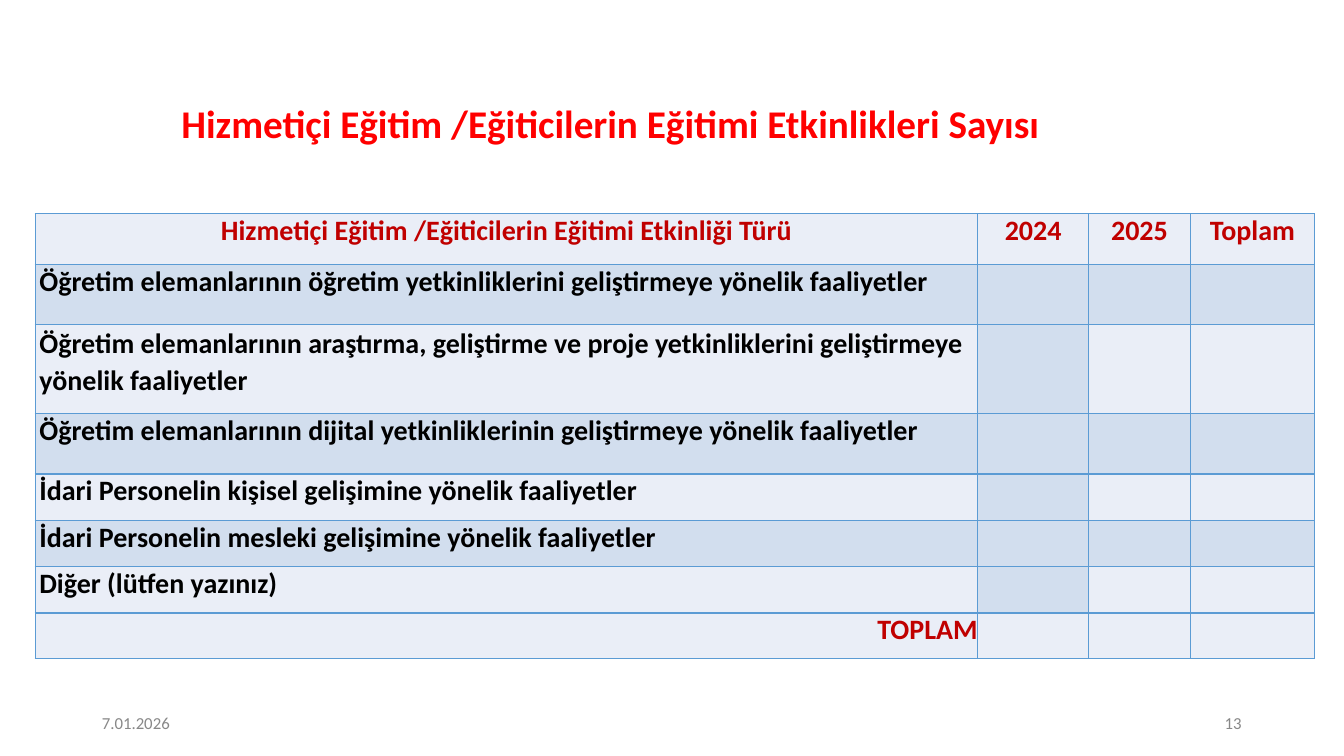
from dataclasses import dataclass

from lxml import etree
from pptx import Presentation
from pptx import util as u
from pptx.dml.color import RGBColor
from pptx.enum import text
from pptx.oxml.ns import qn

FONT = "Calibri"
RED, DARK_RED, BLACK, GREY = "FF0000", "C00000", "000000", "888888"
PALE, BLUE, BORDER = "EAEEF7", "D2DEEE", "5B9BD4"
LEFT, CENTER, RIGHT = text.PP_ALIGN.LEFT, text.PP_ALIGN.CENTER, text.PP_ALIGN.RIGHT


@dataclass
class Label:
    words: str
    left: float
    top: float
    width: float
    height: float
    size: float
    color: str
    bold: bool = False
    inset_left: float = 0
    inset_top: float = 0


@dataclass
class Row:
    height: float
    words: list[str]
    align: text.PP_ALIGN = LEFT
    color: str = BLACK
    indent: float = 2.9
    spacing: float = 1


LABELS = [
    Label("Hizmetiçi Eğitim /Eğiticilerin Eğitimi Etkinlikleri Sayısı",
          110.9, 59.8, 738.7, 54, 28, RED, True, 18.7, 10.8),
    Label("7.01.2026", 72, 509, 51.1, 14.4, 12, GREY, inset_left=0.7),
    Label("13", 872.6, 509, 16.6, 14.4, 12, GREY, inset_left=2.2),
]
COLUMN_WIDTHS = [673.2, 79.2, 72.7, 88.6]
ROWS = [
    Row(36, ["Hizmetiçi Eğitim /Eğiticilerin Eğitimi Etkinliği Türü", "2024", "2025", "Toplam"],
        CENTER, DARK_RED, 0),
    Row(43.2, ["Öğretim elemanlarının öğretim yetkinliklerini geliştirmeye yönelik faaliyetler"]),
    Row(63.4, ["Öğretim elemanlarının araştırma, geliştirme ve proje yetkinliklerini "
               "geliştirmeye yönelik faaliyetler"], spacing=1.07),
    Row(43.2, ["Öğretim elemanlarının dijital yetkinliklerinin geliştirmeye yönelik faaliyetler"]),
    Row(33.1, ["İdari Personelin kişisel gelişimine yönelik faaliyetler"]),
    Row(33.1, ["İdari Personelin mesleki gelişimine yönelik faaliyetler"]),
    Row(33.1, ["Diğer (lütfen yazınız)"]),
    Row(32.4, ["TOPLAM"], RIGHT, DARK_RED, 0),
]


def rgb(color: str) -> RGBColor:
    return RGBColor.from_string(color)


def write(frame, words: str, *, size: float, color: str, bold: bool = False,
          align: text.PP_ALIGN = LEFT, spacing: float = 1) -> None:
    para = frame.paragraphs[0]
    para.alignment = align
    para.line_spacing = spacing
    span = para.add_run()
    span.text = words
    span.font.name = FONT
    span.font.size = u.Pt(size)
    span.font.bold = bold
    span.font.color.rgb = rgb(color)


def add_label(page, label: Label) -> None:
    box = page.shapes.add_textbox(*map(u.Pt, (label.left, label.top, label.width, label.height)))
    frame = box.text_frame
    frame.word_wrap = True
    frame.margin_left, frame.margin_top = u.Pt(label.inset_left), u.Pt(label.inset_top)
    frame.margin_right = frame.margin_bottom = 0
    write(frame, label.words, size=label.size, color=label.color, bold=label.bold)


def set_borders(cell, top: float, bottom: float) -> None:
    """Draw the four cell borders; they must precede the fill in the XML."""
    properties = cell._tc.get_or_add_tcPr()
    sides = {"a:lnL": 1, "a:lnR": 1, "a:lnT": top, "a:lnB": bottom}
    for position, (tag, width) in enumerate(sides.items()):
        line = etree.Element(qn(tag), w=str(u.Pt(width)))
        fill = etree.SubElement(line, qn("a:solidFill"))
        etree.SubElement(fill, qn("a:srgbClr"), val=BORDER)
        properties.insert(position, line)


def cell_fill(row: int, column: int) -> str:
    last = len(ROWS) - 1
    shaded = 0 < row < last and (row % 2 == 1 or column == 1)
    return BLUE if shaded else PALE


def add_activity_table(page) -> None:
    table = page.shapes.add_table(
        len(ROWS), len(COLUMN_WIDTHS), u.Pt(25.2), u.Pt(152.8),
        u.Pt(sum(COLUMN_WIDTHS)), u.Pt(sum(row.height for row in ROWS))).table
    for column, width in zip(table.columns, COLUMN_WIDTHS):
        column.width = u.Pt(width)
    last = len(ROWS) - 1
    for r, row in enumerate(ROWS):
        table.rows[r].height = u.Pt(row.height)
        for c in range(len(COLUMN_WIDTHS)):
            cell = table.cell(r, c)
            cell.margin_left = u.Pt(row.indent)
            cell.margin_top = cell.margin_right = cell.margin_bottom = 0
            cell.fill.solid()
            cell.fill.fore_color.rgb = rgb(cell_fill(r, c))
            set_borders(cell, 2 if r == last else 1, 2 if r == last - 1 else 1)
            if c < len(row.words):
                write(cell.text_frame, row.words[c], size=20, color=row.color, bold=True,
                      align=row.align, spacing=row.spacing)


def main() -> None:
    deck = Presentation()
    deck.slide_width, deck.slide_height = u.Pt(960), u.Pt(540)
    page = deck.slides.add_slide(deck.slide_layouts[6])
    for label in LABELS:
        add_label(page, label)
    add_activity_table(page)
    deck.save("out.pptx")


if __name__ == "__main__":
    main()
